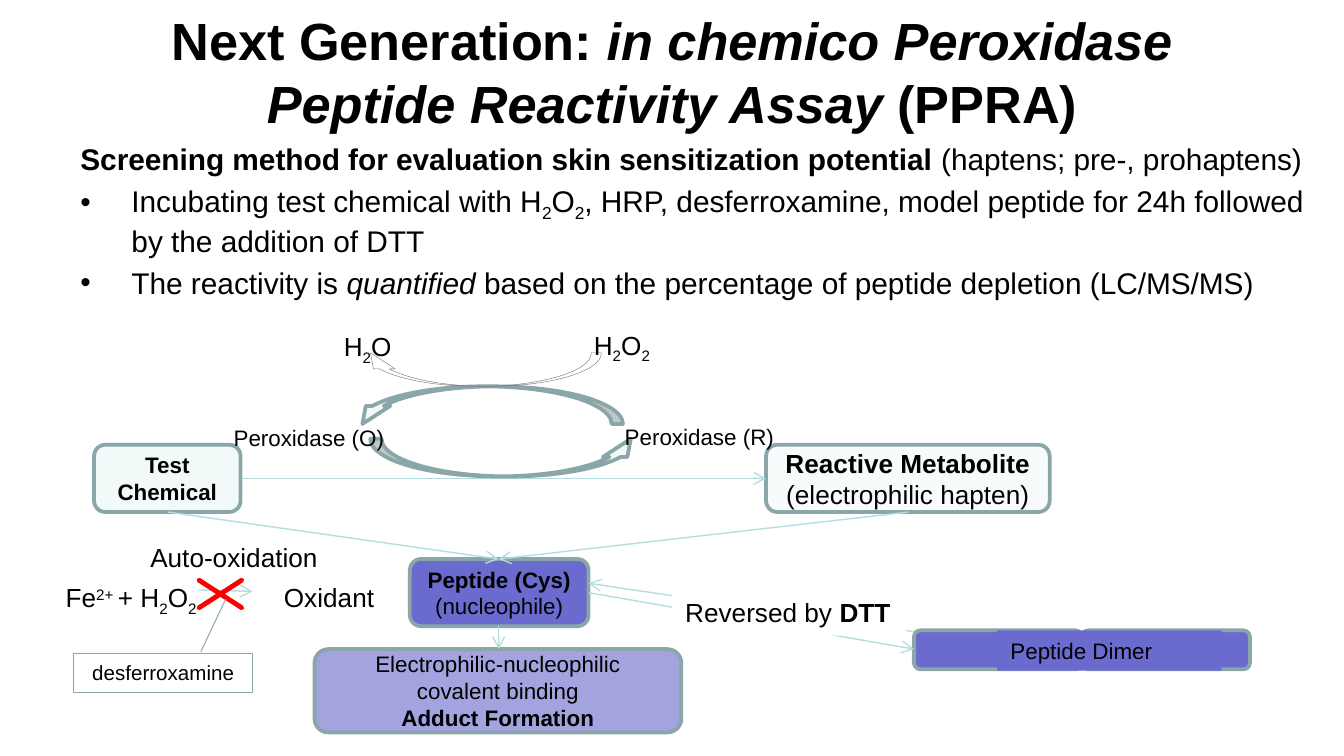
from lxml import etree
from pptx import Presentation
from pptx.dml.color import RGBColor
from pptx.enum.shapes import MSO_CONNECTOR, MSO_SHAPE
from pptx.enum.text import MSO_ANCHOR, PP_ALIGN
from pptx.oxml.ns import qn
from pptx.util import Inches, Pt

ROUNDED = MSO_SHAPE.FLOWCHART_ALTERNATE_PROCESS
RECTANGLE = MSO_SHAPE.RECTANGLE
CURVED = MSO_SHAPE.CURVED_RIGHT_ARROW
MULTIPLY = MSO_SHAPE.MATH_MULTIPLY
CALLOUT = MSO_SHAPE.LINE_CALLOUT_1
STRAIGHT = MSO_CONNECTOR.STRAIGHT
CENTER, LEFT = PP_ALIGN.CENTER, PP_ALIGN.LEFT
MIDDLE, TOP = MSO_ANCHOR.MIDDLE, MSO_ANCHOR.TOP

BLACK = RGBColor(0x00, 0x00, 0x00)
WHITE = RGBColor(0xFF, 0xFF, 0xFF)
MINT = RGBColor(0xF1, 0xF9, 0xF9)
PALE_BLUE = RGBColor(0xF8, 0xFB, 0xFC)
VIOLET = RGBColor(0x6B, 0x6B, 0xCF)
LILAC = RGBColor(0xA3, 0xA3, 0xE0)
SLATE = RGBColor(0x8A, 0xA6, 0xA8)
AQUA = RGBColor(0xB6, 0xDC, 0xDF)
TEAL = RGBColor(0xBB, 0xE0, 0xE3)
GRAY = RGBColor(0x80, 0x80, 0x80)
RED = RGBColor(0xFF, 0x00, 0x00)

BOLD, ITALIC = {"bold": True}, {"italic": True}
BOLD_ITALIC = {"bold": True, "italic": True}
SUB, SUPER = -25000, 30000


def write(paragraph, runs, size, align=LEFT):
    """Fill a paragraph; a run is (text, font format dict or baseline shift)."""
    paragraph.alignment = align
    for text, style in runs:
        run = paragraph.add_run()
        run.text = text
        run.font.name, run.font.size = "Arial", Pt(size)
        run.font.color.rgb = BLACK
        if isinstance(style, dict):
            for name, value in style.items():
                setattr(run.font, name, value)
        else:
            run.font._element.set("baseline", str(style))


def add_figure(kind, place, fill, line, width, adjustments=()):
    figure = slide.shapes.add_shape(kind, *map(Inches, place))
    figure.shadow.inherit = False
    if fill is None:
        figure.fill.background()
    else:
        figure.fill.solid()
        figure.fill.fore_color.rgb = fill
    if line is None:
        figure.line.fill.background()
    else:
        figure.line.color.rgb = line
        figure.line.width = Pt(width)
    for index, value in enumerate(adjustments):
        figure.adjustments[index] = value
    return figure


# Widescreen slide, 16:9
prs = Presentation()
prs.slide_width = Inches(10)
prs.slide_height = Inches(10 * 9 / 16)
slide = prs.slides.add_slide(prs.slide_layouts[5])

# Title
title = slide.shapes.title
title.left, title.top, title.width, title.height = map(Inches, (0.5, 0.06, 9, 0.94))
title.text_frame.vertical_anchor = MIDDLE
write(title.text_frame.paragraphs[0], [
    ("Next Generation: ", BOLD),
    ("in chemico Peroxidase Peptide Reactivity Assay", BOLD_ITALIC),
    (" (PPRA)", BOLD)], 28, CENTER)

# Method summary: a heading line and two bullets
summary = slide.shapes.add_textbox(*map(Inches, (0.5, 1, 9.5, 2.17))).text_frame
summary.word_wrap = True
summary_lines = [
    [("Screening method for evaluation skin sensitization potential ", BOLD),
     ("(haptens; pre-, prohaptens)", {})],
    [("Incubating test chemical with H", {}), ("2", SUB), ("O", {}), ("2", SUB),
     (", HRP, desferroxamine, model peptide for 24h followed by the addition of DTT", {})],
    [("The reactivity is ", {}), ("quantified ", ITALIC),
     ("based on the percentage of peptide depletion (LC/MS/MS)", {})],
]
for index, runs in enumerate(summary_lines):
    paragraph = summary.add_paragraph() if index else summary.paragraphs[0]
    properties = paragraph._p.get_or_add_pPr()
    properties.set("marL", str(Inches(0.38)))
    properties.set("indent", str(Inches(-0.38)))
    if index:
        etree.SubElement(properties, qn("a:buFont")).set("typeface", "Arial")
        etree.SubElement(properties, qn("a:buChar")).set("char", "•")
        paragraph.space_before = Pt(3)
    write(paragraph, runs, 16)

# Reaction boxes: kind, place, fill, outline, size, alignment, paragraphs
boxes = [
    (ROUNDED, (0.7, 3.31, 1.09, 0.5), MINT, SLATE, 12, CENTER, [[("Test Chemical", BOLD)]]),
    (ROUNDED, (5.7, 3.31, 2.11, 0.5), PALE_BLUE, SLATE, 14, CENTER,
     [[("Reactive Metabolite ", BOLD), ("(electrophilic hapten)", {})]]),
    (ROUNDED, (3.05, 4.16, 1.33, 0.5), VIOLET, SLATE, 12, CENTER,
     [[("Peptide (Cys)", BOLD), (" (nucleophile)", {})]]),
    (ROUNDED, (6.8, 4.69, 1.25, 0.29), VIOLET, SLATE, 12, CENTER, []),
    (ROUNDED, (8.05, 4.69, 1.25, 0.29), VIOLET, SLATE, 12, CENTER, []),
    (RECTANGLE, (7.42, 4.69, 1.67, 0.3), VIOLET, None, 12, LEFT, [[("Peptide Dimer", {})]]),
    (ROUNDED, (2.34, 4.83, 2.73, 0.62), LILAC, SLATE, 12, CENTER,
     [[("Electrophilic-nucleophilic covalent binding", {})], [("Adduct Formation", BOLD)]]),
]
for kind, place, fill, line, size, align, paragraphs in boxes:
    frame = add_figure(kind, place, fill, line, 2).text_frame
    frame.word_wrap = True
    frame.vertical_anchor = MIDDLE if align == CENTER else TOP
    for index, runs in enumerate(paragraphs):
        paragraph = frame.add_paragraph() if index else frame.paragraphs[0]
        write(paragraph, runs, size, align)

# Reaction arrows, the last one being auto-oxidation
reactions = [
    (3.71, 4.66, 3.71, 4.83), (4.38, 4.41, 6.8, 4.83), (1.25, 3.81, 3.71, 4.16),
    (1.8, 3.56, 5.7, 3.56), (6.76, 3.81, 3.71, 4.16), (6.8, 4.7, 4.38, 4.34),
    (1.48, 4.39, 1.88, 4.4),
]
for ends in reactions:
    arrow = slide.shapes.add_connector(STRAIGHT, *map(Inches, ends))
    arrow.line.color.rgb = AQUA
    arrow.line.width = Pt(0.75)
    etree.SubElement(arrow.line._get_or_add_ln(), qn("a:tailEnd")).set("type", "arrow")
    etree.SubElement(arrow._element.spPr, qn("a:effectLst"))

# Peroxidase cycle
cycle = [
    ((3.63, 2.39, 0.28, 2.03), 270, MINT, SLATE, 2),
    ((3.48, 2, 0.28, 2.03), 90, MINT, SLATE, 2),
    ((3.45, 1.85, 0.25, 1.8), 270, None, GRAY, 0.25),
]
for place, rotation, fill, line, width in cycle:
    turn = add_figure(CURVED, place, fill, line, width, (0.3, 0.65, 0.48))
    turn.rotation = rotation
turn._element.spPr.find(qn("a:xfrm")).set("flipV", "1")  # peroxide to water

# Labels
labels = [
    ((1.64, 3.11, 1.33, 0.3), 12, [("Peroxidase (O)", {})]),
    ((4.55, 3.1, 1.32, 0.3), 12, [("Peroxidase (R)", {})]),
    ((2.46, 2.41, 0.57, 0.34), 14, [("H", {}), ("2", SUB), ("O", {})]),
    ((4.32, 2.4, 0.64, 0.34), 14, [("H", {}), ("2", SUB), ("O", {}), ("2", SUB)]),
    ((1.02, 3.98, 1.46, 0.34), 14, [("Auto-oxidation", {})]),
    ((0.39, 4.28, 2.5, 0.34), 14,
     [("Fe", {}), ("2+ ", SUPER), ("+ H", {}), ("2", SUB), ("O", {}), ("2", SUB),
      (" \t Oxidant", {})]),
    ((5, 4.39, 1.74, 0.34), 14, [("Reversed by ", {}), ("DTT", BOLD)]),
]
for place, size, runs in labels:
    label = slide.shapes.add_textbox(*map(Inches, place))
    label.text_frame.word_wrap = False
    paragraph = label.text_frame.paragraphs[0]
    if "\t" in runs[-1][0]:
        label.text_frame.word_wrap = True
        tabs = etree.SubElement(paragraph._p.get_or_add_pPr(), qn("a:tabLst"))
        etree.SubElement(tabs, qn("a:tab"), pos=str(Inches(1.57)), algn="l")
    write(paragraph, runs, size)
label.fill.solid()  # the DTT label covers the arrows behind it
label.fill.fore_color.rgb = WHITE

# Blocked auto-oxidation
add_figure(MULTIPLY, (1.33, 4.22, 0.62, 0.4), TEAL, RED, 2, (0.02,))
inhibitor = add_figure(CALLOUT, (0.55, 4.86, 1.33, 0.29), None, SLATE, 0.5,
                       (-0.03, 0.71, -1.39, 0.85)).text_frame
inhibitor.word_wrap = True
inhibitor.vertical_anchor = MIDDLE
write(inhibitor.paragraphs[0], [("desferroxamine", {})], 11, CENTER)

prs.save("out.pptx")
